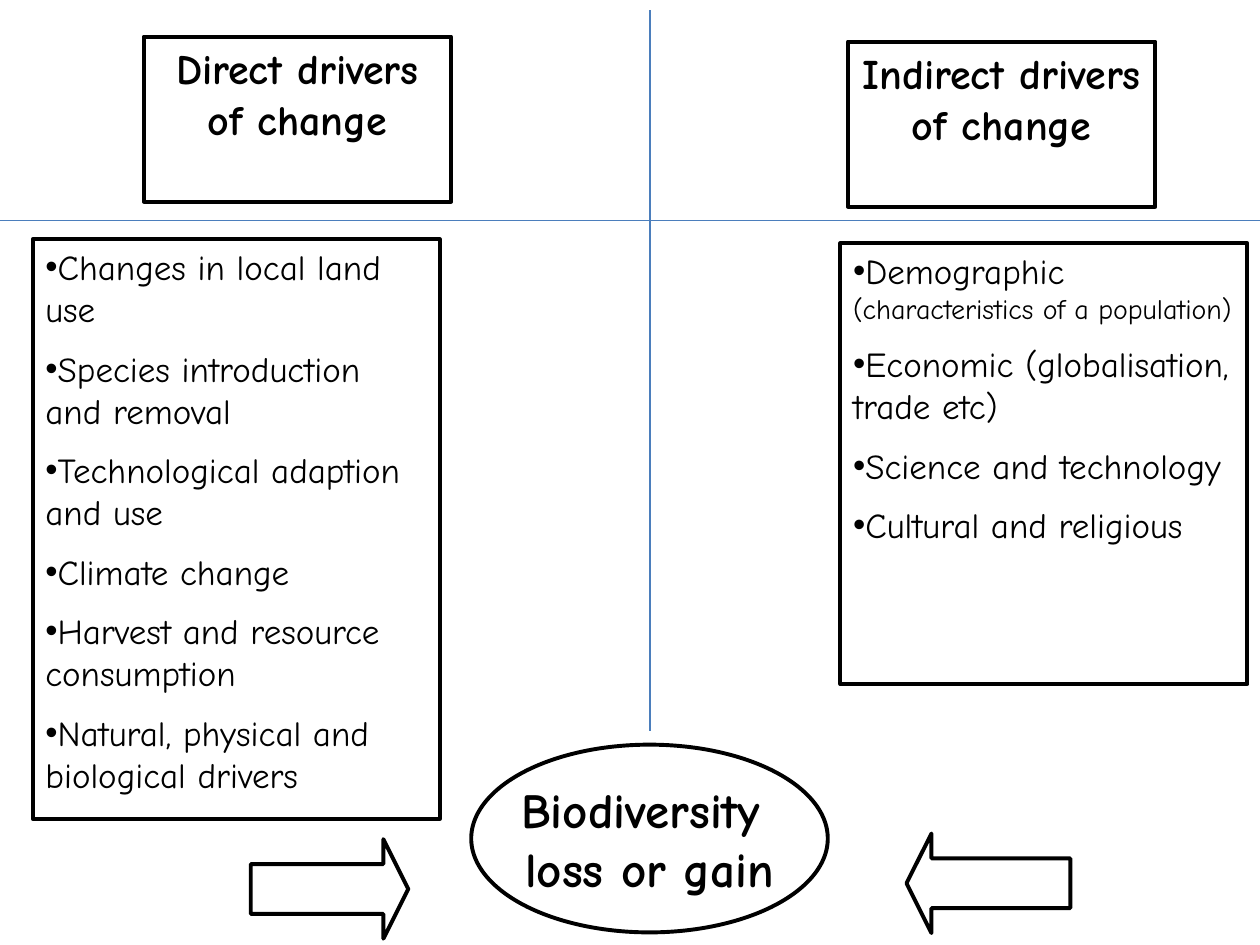
from pptx import Presentation
from pptx.dml.color import RGBColor
from pptx.enum.shapes import MSO_CONNECTOR as Connector, MSO_SHAPE as Preset
from pptx.enum.text import MSO_ANCHOR as Anchor, MSO_AUTO_SIZE as AutoSize, PP_ALIGN as Align
from pptx.oxml.ns import qn
from pptx.util import Inches, Pt
from lxml.etree import SubElement

FONT = "Comic Neue"
BLACK = RGBColor(0x00, 0x00, 0x00)
WHITE = RGBColor(0xFF, 0xFF, 0xFF)
BLUE = RGBColor(0x4B, 0x7E, 0xBC)

WIDTH, HEIGHT = Inches(10), Inches(7.5)
COLUMN, ROW = WIDTH / 100, HEIGHT / 75
HEADING_SIZE = (24.4, 13.1)
LIST_WIDTH = 32.3

DIRECT = [
    ["Changes in local land use"],
    ["Species introduction and removal"],
    ["Technological adaption and use"],
    ["Climate change"],
    ["Harvest and resource consumption"],
    ["Natural, physical and biological drivers"],
]
INDIRECT = [
    ["Demographic ", ("(characteristics of a population)", 16)],
    ["Economic (globalisation, trade etc)"],
    ["Science and technology"],
    ["Cultural and religious"],
]


def place(shape, box):
    left, top, width, height = box
    shape.left, shape.top = round(left * COLUMN), round(top * ROW)
    shape.width, shape.height = round(width * COLUMN), round(height * ROW)


def outline(shape):
    shape.fill.solid()
    shape.fill.fore_color.rgb = WHITE
    shape.line.color.rgb = BLACK
    shape.line.width = Pt(2.25)
    shape.shadow.inherit = False


def write(shape, paragraphs, size, bold=False, align=Align.LEFT, anchor=Anchor.TOP,
          wrap=True, bullet=None, gap=0):
    frame = shape.text_frame
    frame.word_wrap = wrap
    frame.auto_size = AutoSize.NONE
    frame.vertical_anchor = anchor
    for index, parts in enumerate(paragraphs):
        paragraph = frame.add_paragraph() if index else frame.paragraphs[0]
        paragraph.alignment = align
        paragraph.space_before = Pt(gap if index else 0)
        if bullet:
            properties = paragraph._p.get_or_add_pPr()
            properties.set("marL", "0")
            properties.set("indent", "0")
            SubElement(properties, qn("a:buChar")).set("char", bullet)
        for part in parts:
            text, run_size = part if isinstance(part, tuple) else (part, size)
            run = paragraph.add_run()
            run.text = text
            run.font.name = FONT
            run.font.size = Pt(run_size)
            run.font.bold = bold
            run.font.color.rgb = BLACK


def add_drivers(heading, body, title, items, heading_at, list_box):
    place(heading, (*heading_at, *HEADING_SIZE))
    place(body, list_box)
    outline(heading)
    outline(body)
    write(heading, [[title]], 24, bold=True, align=Align.CENTER)
    write(body, items, 20, bullet="•", gap=10)


def add_shape(slide, preset, box, rotation=0):
    shape = slide.shapes.add_shape(preset, 0, 0, 0, 0)
    place(shape, box)
    shape.rotation = rotation
    outline(shape)
    return shape


def add_outcome(slide):
    ellipse = add_shape(slide, Preset.OVAL, (37.4, 59.1, 28.3, 14.9))
    write(ellipse, [["Biodiversity "], ["loss or gain"]], 28, bold=True,
          align=Align.CENTER, anchor=Anchor.MIDDLE, wrap=False)
    for box, rotation in (((74.5, 63.6, 7.9, 13), 90), ((22.2, 64.3, 7.9, 12.5), 270)):
        arrow = add_shape(slide, Preset.DOWN_ARROW, box, rotation)
        arrow.adjustments[0], arrow.adjustments[1] = 0.5, 0.25


def add_divider(slide, start, end):
    points = [round(value * unit) for point in (start, end)
              for value, unit in zip(point, (COLUMN, ROW))]
    line = slide.shapes.add_connector(Connector.STRAIGHT, *points)
    line.line.color.rgb = BLUE
    line.line.width = Pt(0.75)
    SubElement(line._element.spPr, qn("a:effectLst"))


def main():
    presentation = Presentation()
    presentation.slide_width, presentation.slide_height = WIDTH, HEIGHT
    slide = presentation.slides.add_slide(presentation.slide_layouts.get_by_name("Comparison"))
    title, left_heading, left_list, right_heading, right_list = slide.placeholders
    title._element.getparent().remove(title._element)

    add_drivers(left_heading, left_list, "Direct drivers of change", DIRECT,
                (11.4, 2.9), (2.6, 19, LIST_WIDTH, 46))
    add_drivers(right_heading, right_list, "Indirect drivers of change", INDIRECT,
                (67.3, 3.3), (66.7, 19.3, LIST_WIDTH, 35))
    add_outcome(slide)
    add_divider(slide, (-0.8, 17.5), (100, 17.5))
    add_divider(slide, (51.6, 0.8), (51.6, 58))
    presentation.save("out.pptx")


if __name__ == "__main__":
    main()
